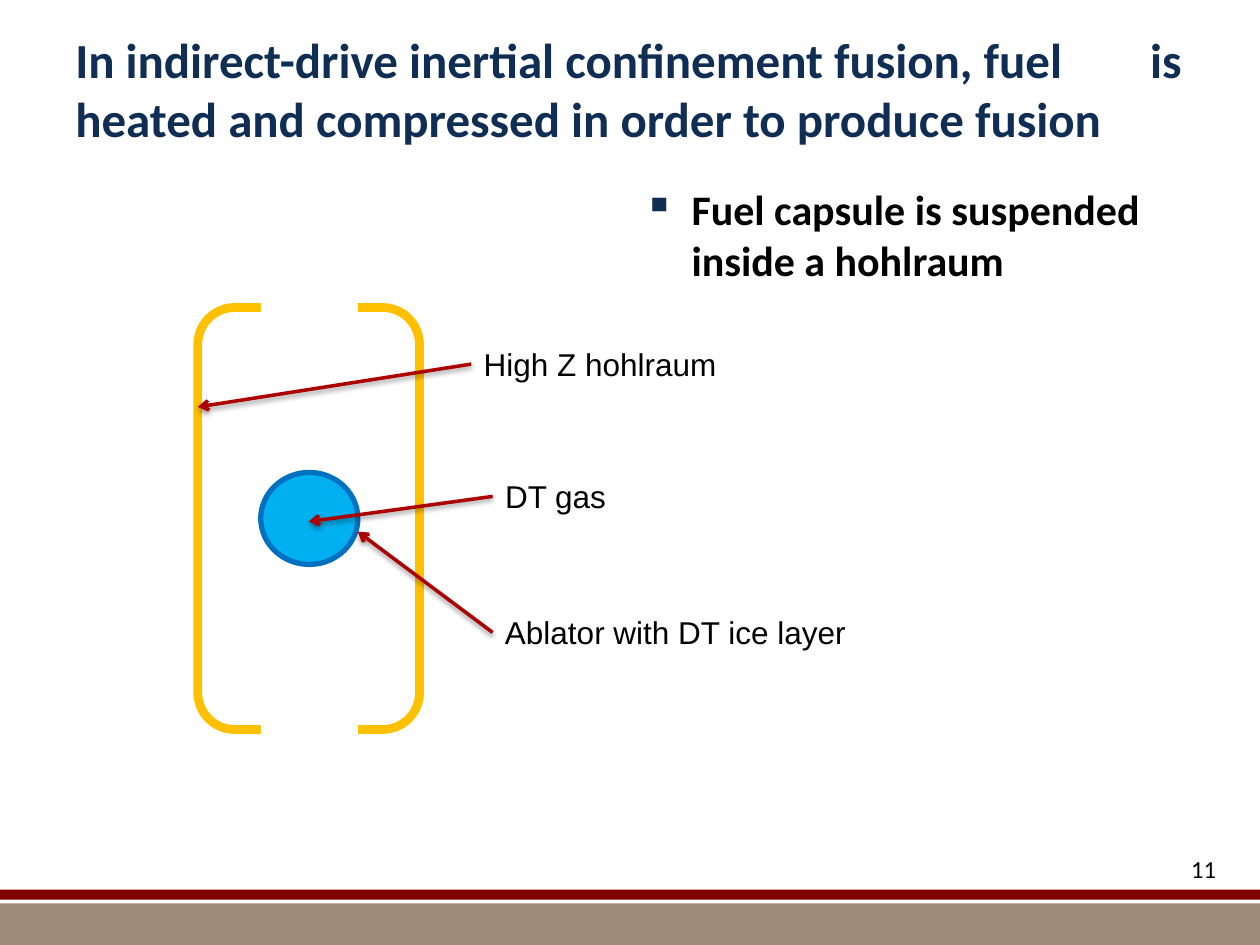
from pptx import Presentation
from pptx.dml.color import RGBColor
from pptx.enum.shapes import MSO_CONNECTOR, MSO_SHAPE
from pptx.enum.text import MSO_ANCHOR, MSO_AUTO_SIZE, PP_ALIGN
from pptx.oxml import parse_xml
from pptx.oxml.ns import nsdecls
from pptx.util import Inches, Pt

NAVY, BLACK, WHITE = "102E54", "000000", "FFFFFF"
MAROON, TAUPE, GOLD = "800000", "9E8C78", "FFC000"
SKY, BLUE, RED = "00B0F0", "0070C0", "AD0101"


def rgb(color):
    return RGBColor.from_string(color)


def drawing(tag, attrs="", inner=""):
    return parse_xml(f'<a:{tag} {nsdecls("a")} {attrs}>{inner}</a:{tag}>')


def add_text(slide, text, box, size=18, font="Calibri", color=BLACK, bold=False,
             align=PP_ALIGN.LEFT, anchor=MSO_ANCHOR.TOP, wrap=True, tab=None,
             bullet=None, indent=0.38):
    sp = slide.shapes.add_textbox(*map(Inches, box))
    tf = sp.text_frame
    tf.word_wrap = wrap
    tf.auto_size = MSO_AUTO_SIZE.NONE if wrap else MSO_AUTO_SIZE.SHAPE_TO_FIT_TEXT
    tf.vertical_anchor = anchor
    p = tf.paragraphs[0]
    p.alignment = align
    pPr = p._p.get_or_add_pPr()
    if bullet:
        pPr.set("marL", str(Inches(indent)))
        pPr.set("indent", str(-Inches(indent)))
        pPr.append(drawing("buClr", inner=f'<a:srgbClr val="{NAVY}"/>'))
        pPr.append(drawing("buChar", f'char="{bullet}"'))
    if tab:
        pPr.append(drawing("tabLst", inner=f'<a:tab pos="{Inches(tab)}" algn="l"/>'))
        tf.margin_right = 0
    r = p.add_run()
    r.text = text
    r.font.name = font
    r.font.size = Pt(size)
    r.font.bold = bold
    r.font.color.rgb = rgb(color)
    return sp


def add_shape(slide, kind, box, fill=None, line=None, width=1):
    sp = slide.shapes.add_shape(kind, *map(Inches, box))
    sp.shadow.inherit = False
    if fill:
        sp.fill.solid()
        sp.fill.fore_color.rgb = rgb(fill)
    else:
        sp.fill.background()
    if line:
        sp.line.color.rgb = rgb(line)
        sp.line.width = Pt(width)
    else:
        sp.line.fill.background()
    return sp


def add_callout(slide, text, box, target):
    label = add_text(slide, text, box, font="Arial", wrap=False)
    left, top, _, height = box
    ends = (left, top + height / 2, *target)
    arrow = slide.shapes.add_connector(MSO_CONNECTOR.STRAIGHT, *map(Inches, ends))
    arrow.begin_connect(label, 1)
    arrow.line.color.rgb = rgb(RED)
    arrow.line.width = Pt(2)
    arrow.line._get_or_add_ln().append(drawing("tailEnd", 'type="arrow"'))
    shadow = (f'<a:outerShdw blurRad="{Pt(3.1)}" dist="{Pt(1.6)}" dir="5400000" '
              f'rotWithShape="0"><a:srgbClr val="{BLACK}"><a:alpha val="38000"/>'
              '</a:srgbClr></a:outerShdw>')
    arrow._element.spPr.append(drawing("effectLst", inner=shadow))


def main():
    prs = Presentation()
    prs.slide_width, prs.slide_height = Inches(10), Inches(7.5)
    slide = prs.slides.add_slide(prs.slide_layouts[6])

    add_shape(slide, MSO_SHAPE.RECTANGLE, (0, 7.17, 10, 0.33), TAUPE)
    add_shape(slide, MSO_SHAPE.RECTANGLE, (0, 7.06, 10, 0.08), MAROON)
    add_text(slide, "In indirect-drive inertial confinement fusion, fuel\tis "
             "heated and compressed in order to produce fusion",
             (0.5, 0.16, 9, 1.08), size=28, color=NAVY, bold=True,
             anchor=MSO_ANCHOR.MIDDLE, tab=8.53)
    add_text(slide, "11", (9.08, 6.73, 0.67, 0.41), size=14, align=PP_ALIGN.RIGHT)
    add_text(slide, "Fuel capsule is suspended inside a hohlraum",
             (5.01, 1.41, 4.49, 5.18), size=24, bold=True, bullet="▪")

    add_shape(slide, MSO_SHAPE.ROUNDED_RECTANGLE, (1.57, 2.44, 1.76, 3.35),
              line=GOLD, width=5)
    add_shape(slide, MSO_SHAPE.RECTANGLE, (2.07, 1.85, 0.77, 4.73), WHITE)
    add_shape(slide, MSO_SHAPE.OVAL, (2.07, 3.75, 0.77, 0.73), SKY, BLUE, 3)

    callouts = [
        ("Ablator with DT ice layer", (3.91, 4.82, 2.93, 0.4), (2.84, 4.22)),
        ("DT gas", (3.91, 3.74, 1.01, 0.4), (2.45, 4.14)),
        ("High Z hohlraum", (3.74, 2.69, 2.07, 0.4), (1.57, 3.23)),
    ]
    for text, box, target in callouts:
        add_callout(slide, text, box, target)

    prs.save("out.pptx")


if __name__ == "__main__":
    main()
